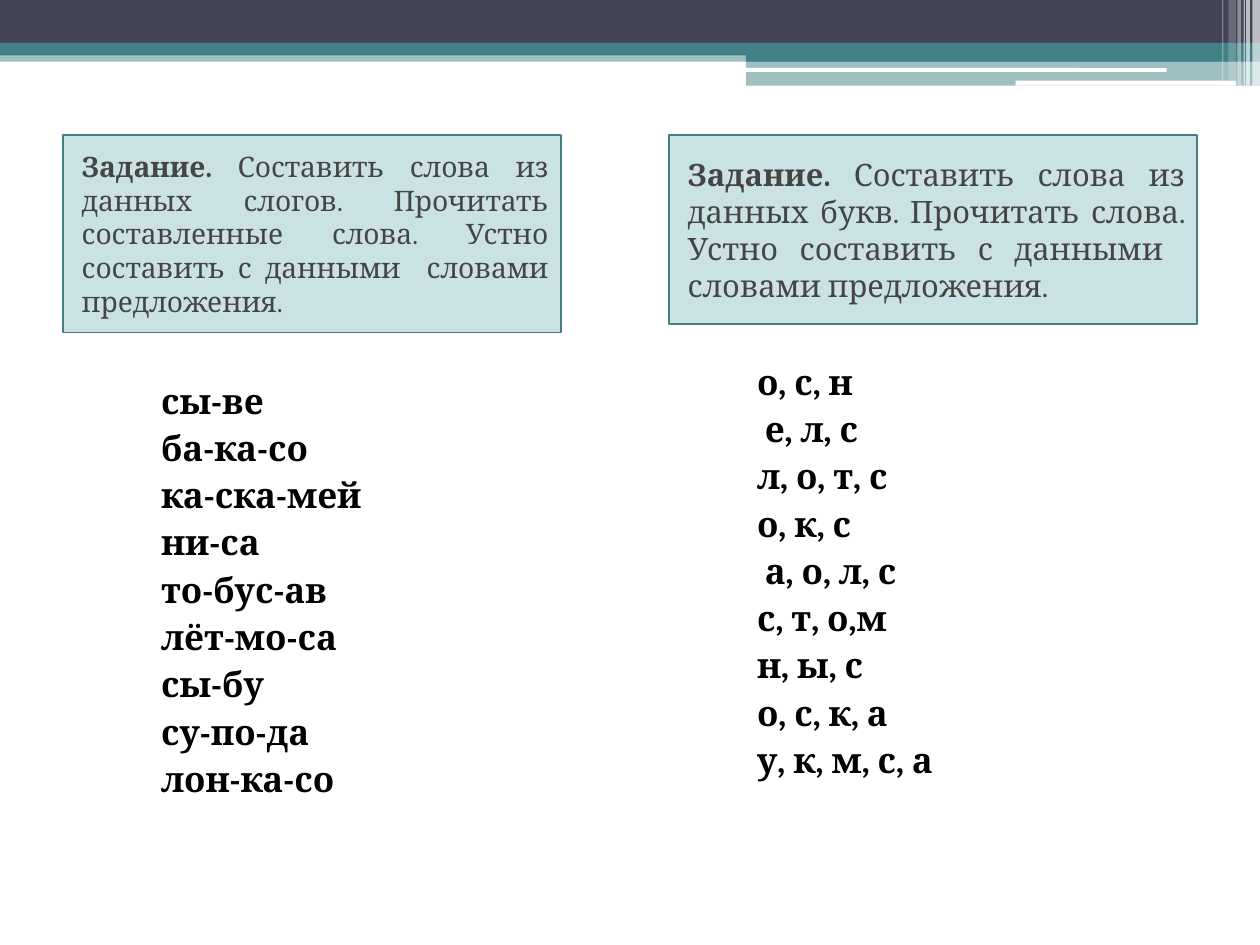
from lxml.etree import SubElement
from pptx import Presentation
from pptx.dml.color import RGBColor
from pptx.enum.shapes import MSO_SHAPE
from pptx.enum.text import MSO_ANCHOR, PP_ALIGN
from pptx.oxml.ns import qn
from pptx.util import Inches, Pt

THEME = {
    "font": "Cambria", "dark": "424456", "teal": "438086", "card": "328E97",
    "white": "FFFFFF", "grey": "454545", "black": "000000",
    "list": 20, "gap": 3, "line": 1,
}

BANDS = [
    ((0, 0.4, 10, 0.09), "teal", 50),
    ((0, 0, 10, 0.34), "dark", 100),
    ((0, 0.34, 10, 0.1), "teal", 100),
    ((5.92, 0.39, 4.08, 0.1), "teal", 100),
    ((5.92, 0.48, 4.08, 0.2), "teal", 50),
]
PILLS = [(5.91, 0.54, 3.35, 0.03), (8.06, 0.64, 1.75, 0.04)]
STRIPES = [
    (9.94, 0.06, 0.68, 65), (9.89, 0.03, 0.68, 65), (9.87, 0.01, 0.68, 60),
    (9.82, 0.03, 0.68, 40), (9.75, 0.06, 0.64, 20), (9.7, 0.01, 0.64, 30),
]
CARDS = [
    ((0.5, 1.07, 3.95, 1.57), 16.1,
     "Составить слова из данных слогов. Прочитать составленные слова. "
     "Устно составить с данными  словами предложения."),
    ((5.31, 1.07, 4.19, 1.5), 17.6,
     "Составить слова из данных букв. Прочитать слова. "
     "Устно составить с данными  словами предложения."),
]
LISTS = [
    ((1.06, 2.96, 3.31, 3.74),
     ["сы-ве", "ба-ка-со", "ка-ска-мей", "ни-са", "то-бус-ав",
      "лёт-мо-са", "сы-бу", "су-по-да", "лон-ка-со"]),
    ((5.79, 2.81, 3.71, 3.89),
     ["о, с, н", " е, л, с", "л, о, т, с", "о, к, с", " а, о, л, с",
      "с, т, о,м", "н, ы, с", "о, с, к, а", "у, к, м, с, а"]),
]


def tint(name):
    return RGBColor.from_string(THEME[name])


def draw(slide, box, fill, alpha=100, kind=MSO_SHAPE.RECTANGLE):
    shape = slide.shapes.add_shape(kind, *map(Inches, box))
    shape.shadow.inherit = False
    shape.line.fill.background()
    shape.fill.solid()
    shape.fill.fore_color.rgb = tint(fill)
    if alpha < 100:
        color = shape.fill._xPr.find(qn("a:solidFill"))[0]
        SubElement(color, qn("a:alpha"), val=str(alpha * 1000))
    return shape


def write(para, text, size, color, bold):
    run = para.add_run()
    run.text = text
    font = run.font
    font.name, font.size, font.bold = THEME["font"], Pt(size), bold
    font.color.rgb = tint(color)


def style(para, left, first, align):
    para.alignment = align
    para.space_before = Pt(THEME["gap"])
    props = para._p.get_or_add_pPr()
    props.set("marL", str(Inches(left)))
    props.set("indent", str(Inches(first)))


def card(slide, box, size, text):
    shape = draw(slide, box, "card", 25)
    shape.line.color.rgb = tint("teal")
    shape.line.width = Pt(THEME["line"])
    frame = shape.text_frame
    frame.word_wrap = True
    frame.vertical_anchor = MSO_ANCHOR.MIDDLE
    para = frame.paragraphs[0]
    style(para, 0.05, 0, PP_ALIGN.JUSTIFY)
    write(para, "Задание. ", size, "grey", True)
    write(para, text, size, "grey", False)


def column(slide, box, words):
    frame = slide.shapes.add_textbox(*map(Inches, box)).text_frame
    frame.word_wrap = True
    for i, word in enumerate(words):
        para = frame.add_paragraph() if i else frame.paragraphs[0]
        style(para, 0.4, -0.28, PP_ALIGN.LEFT)
        write(para, word, THEME["list"], "black", True)


def main():
    deck = Presentation()
    deck.slide_width, deck.slide_height = Inches(10), Inches(7.5)
    slide = deck.slides.add_slide(deck.slide_layouts[6])
    for band in BANDS:
        draw(slide, *band)
    for box in PILLS:
        draw(slide, box, "white", kind=MSO_SHAPE.ROUNDED_RECTANGLE)
    for left, width, height, alpha in STRIPES:
        draw(slide, (left, 0, width, height), "white", alpha)
    for item in CARDS:
        card(slide, *item)
    for item in LISTS:
        column(slide, *item)
    deck.save("out.pptx")


if __name__ == "__main__":
    main()
